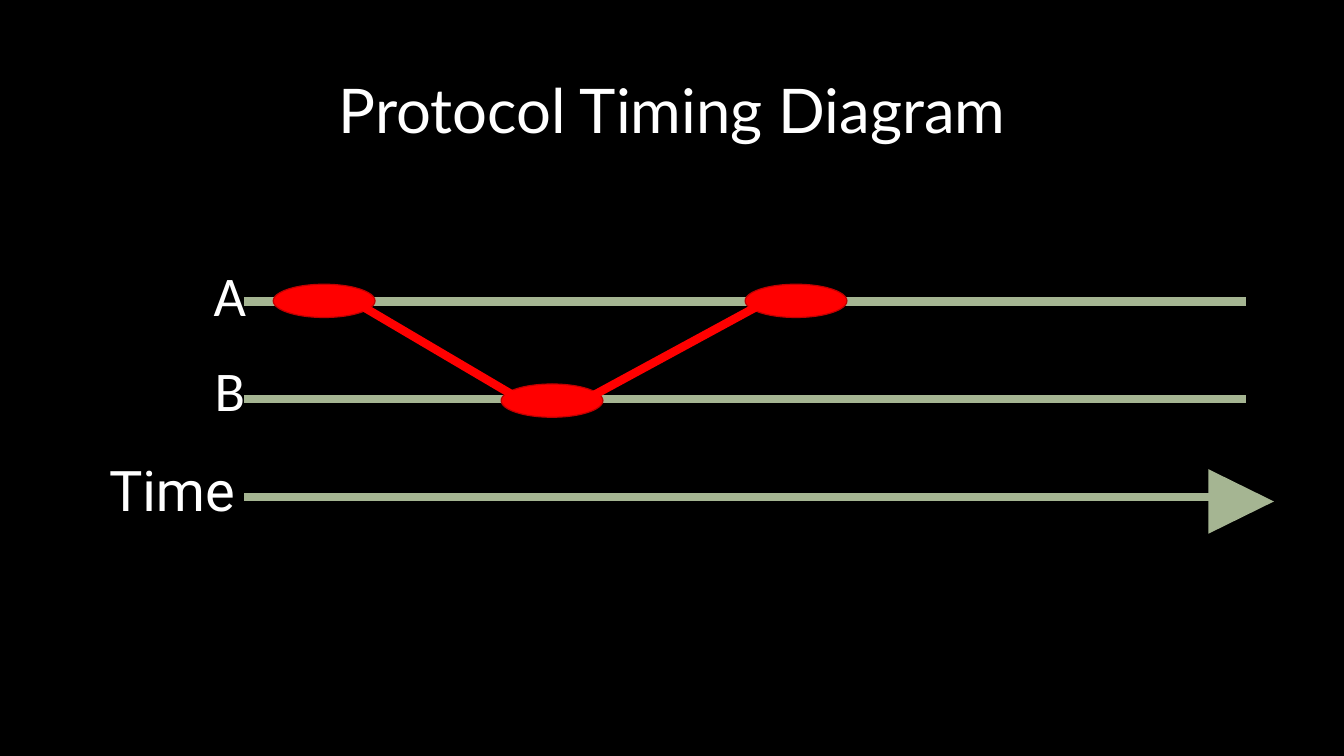
from dataclasses import dataclass

from lxml import etree
from pptx import Presentation
from pptx import util as u
from pptx.dml.color import RGBColor
from pptx.enum import shapes, text
from pptx.oxml.ns import qn
from pptx.shapes.autoshape import Shape
from pptx.slide import Slide

BLACK = RGBColor(0x00, 0x00, 0x00)
WHITE = RGBColor(0xFF, 0xFF, 0xFF)
SAGE = RGBColor(0xA5, 0xB5, 0x92)
RED = RGBColor(0xFF, 0x00, 0x00)
DARK_RED = RGBColor(0xC0, 0x00, 0x00)

LINE_WEIGHT = 6
TRACK_LEFT, TRACK_RIGHT = 2.42, 12.36
TRACK_TOP, TRACK_GAP, TRACK_COUNT = 2.99, 0.97, 3
EVENT_WIDTH, EVENT_HEIGHT = 1.01, 0.33


@dataclass(frozen=True)
class Label:
    words: str
    left: float
    top: float
    width: float
    height: float
    font: str
    size: int = 40


@dataclass(frozen=True)
class Segment:
    x1: float
    y1: float
    x2: float
    y2: float
    color: RGBColor


@dataclass(frozen=True)
class Event:
    left: float
    top: float


TITLE = Label("Protocol Timing Diagram", 0.92, 0.4, 11.5, 1.45, "Lato", 44)
LABELS = [
    Label("A", 1.93, 2.54, 0.7, 0.77, "Calibri"),
    Label("B", 1.93, 3.48, 0.7, 0.77, "Calibri"),
    Label("Time", 0.92, 4.47, 1.57, 0.77, "Roboto"),
]
TRACKS = [
    Segment(TRACK_LEFT, y, TRACK_RIGHT, y, SAGE)
    for y in (TRACK_TOP + row * TRACK_GAP for row in range(TRACK_COUNT))
]
EVENTS = [Event(2.71, 2.82), Event(4.97, 3.81), Event(7.39, 2.82)]
MESSAGES = [
    Segment(3.51, 2.99, 5.19, 3.98, RED),
    Segment(7.64, 2.97, 5.65, 4.05, RED),
]


def add_label(page: Slide, label: Label) -> Shape:
    box = page.shapes.add_textbox(
        u.Inches(label.left), u.Inches(label.top),
        u.Inches(label.width), u.Inches(label.height),
    )
    frame = box.text_frame
    frame.text = label.words
    frame.word_wrap = True
    para = frame.paragraphs[0]
    para.alignment = text.PP_ALIGN.CENTER
    font = para.runs[0].font
    font.name = label.font
    font.size = u.Pt(label.size)
    font.color.rgb = WHITE
    return box


def add_segment(page: Slide, segment: Segment) -> None:
    line = page.shapes.add_connector(
        shapes.MSO_CONNECTOR.STRAIGHT,
        u.Inches(segment.x1), u.Inches(segment.y1),
        u.Inches(segment.x2), u.Inches(segment.y2),
    )
    line.line.color.rgb = segment.color
    line.line.width = u.Pt(LINE_WEIGHT)
    etree.SubElement(line._element.spPr, qn("a:effectLst"))


def add_event(page: Slide, event: Event) -> None:
    oval = page.shapes.add_shape(
        shapes.MSO_SHAPE.OVAL, u.Inches(event.left), u.Inches(event.top),
        u.Inches(EVENT_WIDTH), u.Inches(EVENT_HEIGHT),
    )
    oval.shadow.inherit = False
    oval.fill.solid()
    oval.fill.fore_color.rgb = RED
    oval.line.color.rgb = DARK_RED
    oval.line.width = u.Pt(0.85)


def add_time_arrowhead(page: Slide) -> None:
    head = page.shapes.add_shape(
        shapes.MSO_SHAPE.ISOSCELES_TRIANGLE,
        u.Inches(11.99), u.Inches(4.65), u.Inches(0.64), u.Inches(0.65),
    )
    head.rotation = 90
    head.shadow.inherit = False
    head.fill.solid()
    head.fill.fore_color.rgb = SAGE
    head.line.fill.background()


def main() -> None:
    deck = Presentation()
    deck.slide_width = u.Inches(13.33)
    deck.slide_height = u.Inches(7.5)
    page = deck.slides.add_slide(deck.slide_layouts[6])
    page.background.fill.solid()
    page.background.fill.fore_color.rgb = BLACK

    # Title
    title = add_label(page, TITLE)
    title.text_frame.vertical_anchor = text.MSO_ANCHOR.MIDDLE
    title.text_frame.paragraphs[0].line_spacing = 0.9

    # Tracks, events and the messages between them
    for track in TRACKS:
        add_segment(page, track)
    for event in EVENTS:
        add_event(page, event)
    for message in MESSAGES:
        add_segment(page, message)

    # Track labels and the head of the time axis
    for label in LABELS:
        add_label(page, label)
    add_time_arrowhead(page)

    deck.save("out.pptx")


if __name__ == "__main__":
    main()
